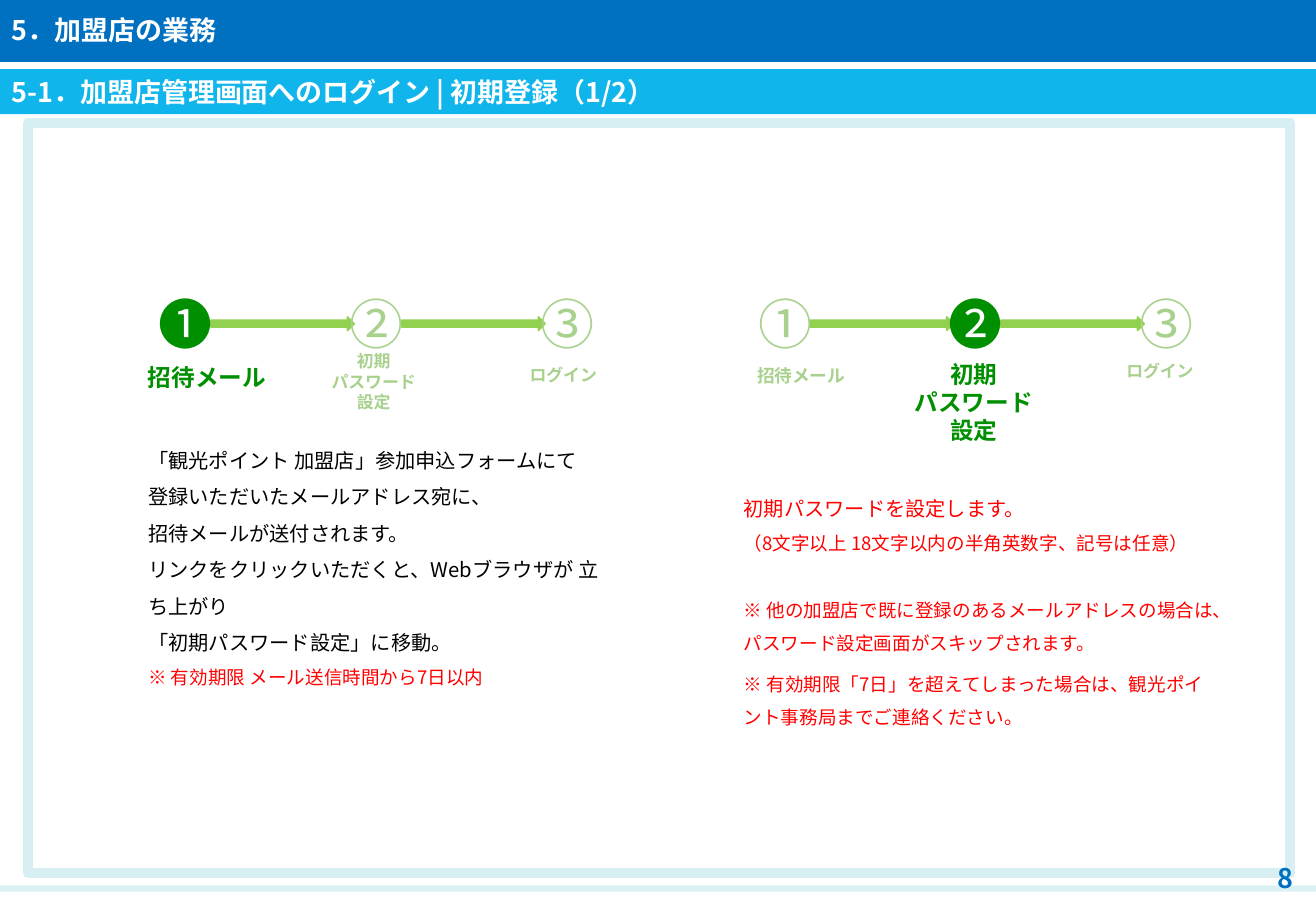
from lxml import etree
from pptx import Presentation
from pptx.dml.color import RGBColor
from pptx.enum.shapes import MSO_SHAPE as SHAPE
from pptx.enum.text import MSO_ANCHOR as ANCHOR, PP_ALIGN as ALIGN
from pptx.oxml.ns import qn
from pptx.util import Inches, Pt

FONT = "Noto Sans CJK JP"
BLUE = RGBColor(0x00, 0x70, 0xC0)
CYAN = RGBColor(0x10, 0xB5, 0xEB)
PALE = RGBColor(0xD7, 0xEF, 0xF3)
LIME = RGBColor(0x92, 0xD0, 0x50)
GREEN = RGBColor(0x00, 0x8F, 0x00)
FADED = RGBColor(0xA9, 0xD1, 0x8E)
RED = RGBColor(0xFF, 0x00, 0x00)
BLACK = RGBColor(0x00, 0x00, 0x00)
WHITE = RGBColor(0xFF, 0xFF, 0xFF)

WIDTH, HEIGHT = Inches(10.83), Inches(7.5)
STEP_PITCH = 14.5  # distance between step circles, % of slide width

# Step flows: left edge, then (numeral, colour, label lines, size, label x, label y)
FLOWS = [
    (11.17, [("❶", GREEN, ["招待メール"], 14, 10.62, 39.87),
             ("②", FADED, ["初期", "パスワード", "設定"], 10, 23.27, 38.53),
             ("③", FADED, ["ログイン"], 10, 37.67, 40)]),
    (56.7, [("①", FADED, ["招待メール"], 10.5, 55.77, 40),
            ("❷", GREEN, ["初期", "パスワード", "設定"], 14, 68.88, 39.47),
            ("③", FADED, ["ログイン"], 10, 83.01, 39.6)]),
]

# Explanations: (text, size, colour, space before)
INVITE_TEXT = [
    ("「観光ポイント 加盟店」参加申込フォームにて", 12, BLACK, 0),
    ("登録いただいたメールアドレス宛に、", 12, BLACK, 0),
    ("招待メールが送付されます。", 12, BLACK, 0),
    ("リンクをクリックいただくと、Webブラウザが 立ち上がり", 12, BLACK, 0),
    ("「初期パスワード設定」に移動。", 12, BLACK, 0),
    ("※ 有効期限 メール送信時間から7日以内", 11, RED, 0),
]
PASSWORD_TEXT = [
    ("初期パスワードを設定します。", 12, RED, 0),
    ("（8文字以上 18文字以内の半角英数字、記号は任意）", 11, RED, 0),
    ("※ 他の加盟店で既に登録のあるメールアドレスの場合は、"
     "パスワード設定画面がスキップされます。", 11, RED, 19.7),
    ("※ 有効期限「7日」を超えてしまった場合は、"
     "観光ポイント事務局までご連絡ください。", 11, RED, 4),
]


def place(x, y, w, h):
    """Turn percentages of the slide's size into lengths."""
    return [int(share * side / 100)
            for share, side in zip((x, y, w, h), (WIDTH, HEIGHT) * 2)]


def add_run(p, text, size, color, bold=False):
    r = p.add_run()
    r.text = text
    r.font.size, r.font.bold = Pt(size), bold
    r.font.color.rgb = color
    r.font.name = FONT
    etree.SubElement(r.font._element, qn("a:ea"), typeface=FONT)


def add_figure(s, kind, box, fill=None, line=None, weight=1):
    sp = s.shapes.add_shape(kind, *place(*box))
    sp.shadow.inherit = False
    if fill is None:
        sp.fill.background()
    else:
        sp.fill.solid()
        sp.fill.fore_color.rgb = fill
    if line is None:
        sp.line.fill.background()
    else:
        sp.line.color.rgb = line
        sp.line.width = Pt(weight)
    return sp


def add_heading(s, box, fill, text):
    tf = add_figure(s, SHAPE.RECTANGLE, box, fill).text_frame
    tf.vertical_anchor = ANCHOR.MIDDLE
    tf.paragraphs[0].alignment = ALIGN.LEFT
    add_run(tf.paragraphs[0], text, 16, WHITE, True)


def add_text(s, box, lines, align=ALIGN.LEFT, bold=False, spacing=None,
             inset=False, wrap=True, anchor=ANCHOR.TOP):
    tf = s.shapes.add_textbox(*place(*box)).text_frame
    tf.word_wrap, tf.vertical_anchor = wrap, anchor
    if not inset:
        tf.margin_left = tf.margin_right = tf.margin_top = tf.margin_bottom = 0
    for i, (text, size, color, before) in enumerate(lines):
        p = tf.add_paragraph() if i else tf.paragraphs[0]
        p.alignment, p.line_spacing = align, spacing
        if before:
            p.space_before = Pt(before)
        p._p.get_or_add_pPr().set("hangingPunct", "1")
        add_run(p, text, size, color, bold)


def add_flow(s, left, steps):
    # Arrows lie behind the circled numerals
    for i in range(len(steps) - 1):
        add_figure(s, SHAPE.RIGHT_ARROW,
                   (left + 4.85 + i * STEP_PITCH, 34.8, 10.9, 1.47), LIME, LIME)
    for i, (numeral, color, label, size, x, y) in enumerate(steps):
        add_text(s, (left + i * STEP_PITCH, 31.2, 6, 8.53),
                 [(numeral, 32, color, 0)], inset=True, wrap=False)
        add_text(s, (x, y, 10.25, 2.3 * len(label)),
                 [(line, size, color, 0) for line in label], ALIGN.CENTER, True)


def main():
    prs = Presentation()
    prs.slide_width, prs.slide_height = WIDTH, HEIGHT
    s = prs.slides.add_slide(prs.slide_layouts[6])

    # Footer band, frame and page number
    band = add_figure(s, SHAPE.RECTANGLE, (0, 97.2, 100, 0.67), PALE)
    color = band._element.spPr.find(".//" + qn("a:srgbClr"))
    etree.SubElement(color, qn("a:alpha"), val="85000")
    frame = add_figure(s, SHAPE.RECTANGLE, (2.12, 13.47, 95.94, 82.4),
                       line=PALE, weight=6)
    etree.SubElement(frame.line._get_or_add_ln(), qn("a:round"))
    add_text(s, (79.04, 94.4, 20.13, 3.87), [("8", 16, BLUE, 0)], ALIGN.RIGHT,
             True, inset=True, anchor=ANCHOR.MIDDLE)

    # Headings
    add_heading(s, (0, -0.27, 100, 7.07), BLUE, "5．加盟店の業務")
    add_heading(s, (0, 7.6, 100, 4.93), CYAN,
                "5-1．加盟店管理画面へのログイン | 初期登録（1/2）")

    # Step flows and their explanations
    for left, steps in FLOWS:
        add_flow(s, left, steps)
    add_text(s, (11.27, 47.87, 34.63, 23.33), INVITE_TEXT, spacing=1.5)
    add_text(s, (56.51, 53.2, 35.92, 26.27), PASSWORD_TEXT, spacing=1.5)

    prs.save("out.pptx")


if __name__ == "__main__":
    main()
